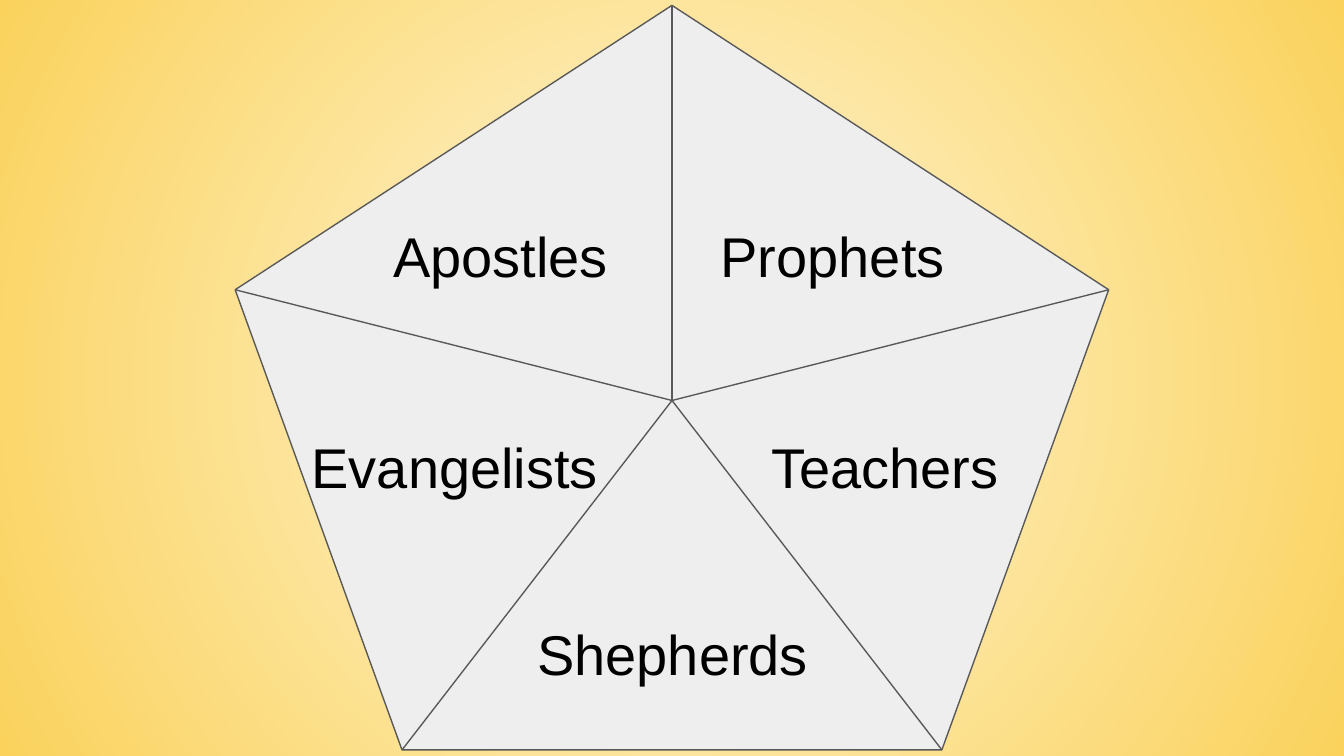
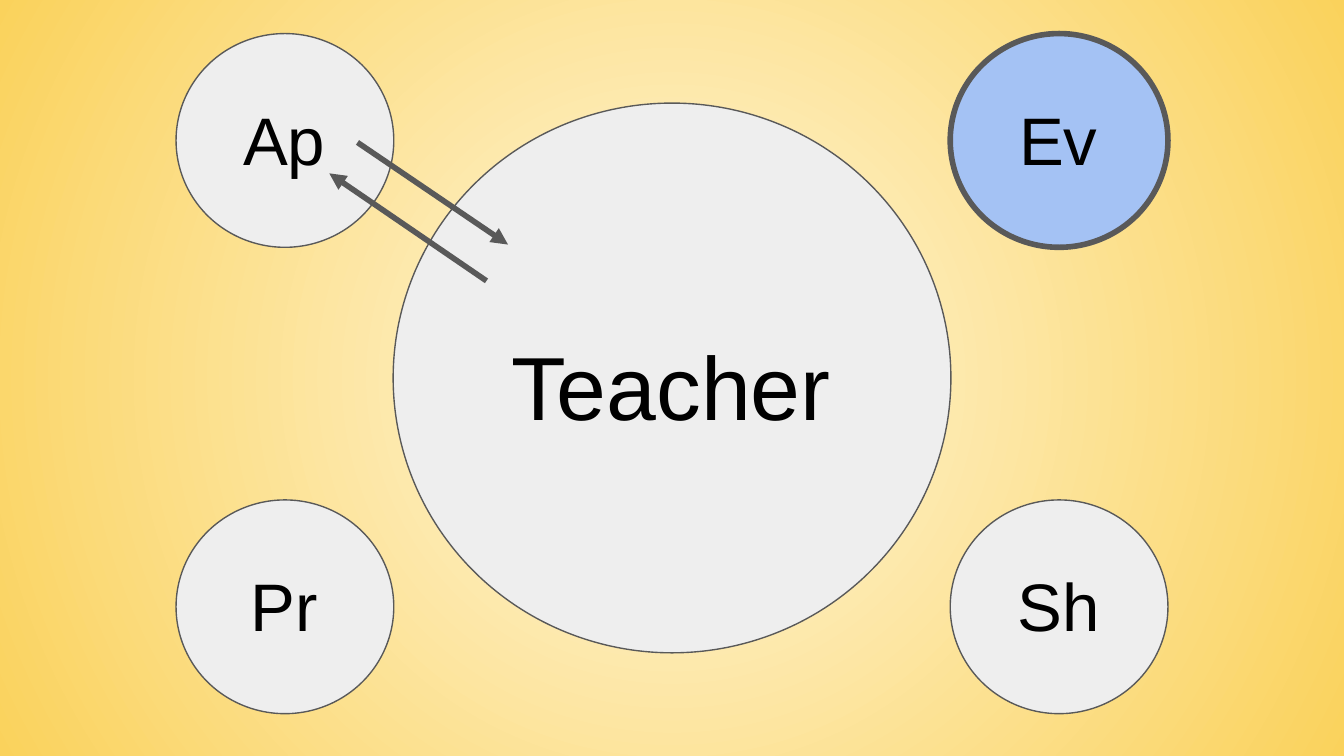
from lxml import etree
from pptx import Presentation
from pptx.dml.color import RGBColor
from pptx.enum.shapes import MSO_CONNECTOR, MSO_SHAPE
from pptx.enum.text import MSO_ANCHOR, PP_ALIGN
from pptx.oxml.ns import qn
from pptx.util import Inches, Pt

WIDTH, HEIGHT = 10, 10 * 9 / 16
FONT = "Arial"
CREAM = RGBColor(0xFF, 0xF6, 0xDB)
GOLD = RGBColor(0xFA, 0xD2, 0x5C)
PALE_GREY = RGBColor(0xEE, 0xEE, 0xEE)
DARK_GREY = RGBColor(0x59, 0x59, 0x59)
SKY_BLUE = RGBColor(0xA4, 0xC2, 0xF4)
BLACK = RGBColor(0, 0, 0)
THIN, THICK = 0.75, 3

# Slide 1: five roles as (name, left, top, width)
ROLES = [
    ("Apostles", 2.72, 1.55, 2.01),
    ("Evangelists", 2.2, 3.12, 2.37),
    ("Teachers", 5.58, 3.12, 2.01),
    ("Prophets", 5.19, 1.55, 2.01),
    ("Shepherds", 3.82, 4.51, 2.37),
]
PENTAGON = (1.75, 0.04, 6.5, 5.54)
HUB = (WIDTH / 2, 2.98)
# Corners as shares of the pentagon's width and height
CORNERS = [(0.5, 0), (0, 0.382), (1, 0.382), (0.191, 1), (0.809, 1)]

# Slide 2: one large circle, and small ones as (name, column, row, fill, line width)
CENTRE_ROLE = "Teacher"
CENTRE_SIZE = (4.15, 4.09)
OUTER_ROLES = [
    ("Ap", 0, 0, PALE_GREY, THIN),
    ("Pr", 0, 1, PALE_GREY, THIN),
    ("Sh", 1, 1, PALE_GREY, THIN),
    ("Ev", 1, 0, SKY_BLUE, THICK),
]
OUTER_ORIGIN, OUTER_STEP, OUTER_SIZE = (1.31, 0.25), (5.76, 3.47), (1.62, 1.59)
EXCHANGE = [((3.62, 2.09), (2.45, 1.29)), ((2.66, 1.06), (3.78, 1.82))]


def add_slide(deck):
    """Blank slide with the shared radial background."""
    slide = deck.slides.add_slide(deck.slide_layouts[6])
    fill = slide.background.fill
    fill.gradient()
    for stop, colour in zip(fill.gradient_stops, (CREAM, GOLD)):
        stop.color.rgb = colour
    linear = next(slide.element.iter(qn("a:lin")))
    radial = etree.Element(qn("a:path"), path="circle")
    etree.SubElement(radial, qn("a:fillToRect"),
                     {side: "50000" for side in "ltrb"})
    linear.getparent().replace(linear, radial)
    return slide


def add_outlined(shapes, preset, box, fill=PALE_GREY, weight=THIN):
    figure = shapes.add_shape(preset, *map(Inches, box))
    figure.shadow.inherit = False
    figure.fill.solid()
    figure.fill.fore_color.rgb = fill
    figure.line.color.rgb = DARK_GREY
    figure.line.width = Pt(weight)


def add_line(shapes, start, end, weight=THIN, arrow=False):
    line = shapes.add_connector(MSO_CONNECTOR.STRAIGHT,
                                *map(Inches, (*start, *end)))
    line.line.color.rgb = DARK_GREY
    line.line.width = Pt(weight)
    if arrow:
        etree.SubElement(line.line._get_or_add_ln(), qn("a:tailEnd"),
                         type="triangle")
    etree.SubElement(line._element.spPr, qn("a:effectLst"))


def add_label(shapes, text, box, size):
    label = shapes.add_textbox(*map(Inches, box))
    frame = label.text_frame
    frame.word_wrap = True
    frame.vertical_anchor = MSO_ANCHOR.TOP
    frame.margin_left = frame.margin_right = Inches(0.1)
    frame.margin_top = frame.margin_bottom = Inches(0.1)
    paragraph = frame.paragraphs[0]
    paragraph.alignment = PP_ALIGN.CENTER
    run = paragraph.add_run()
    run.text = text
    run.font.name = FONT
    run.font.size = Pt(size)
    run.font.color.rgb = BLACK


def build_pentagon(deck):
    shapes = add_slide(deck).shapes.add_group_shape().shapes
    add_outlined(shapes, MSO_SHAPE.REGULAR_PENTAGON, PENTAGON)
    left, top, width, height = PENTAGON
    # Spokes from the hub to every corner
    for across, down in CORNERS:
        add_line(shapes, (left + across * width, top + down * height), HUB)
    for name, x, y, label_width in ROLES:
        add_label(shapes, name, (x, y, label_width, 0.6), 30)


def build_circles(deck):
    shapes = add_slide(deck).shapes
    # Central role
    w, h = CENTRE_SIZE
    add_outlined(shapes, MSO_SHAPE.OVAL,
                 ((WIDTH - w) / 2, (HEIGHT - h) / 2, w, h))
    add_label(shapes, CENTRE_ROLE, (3.68, 2.36, 2.63, 0.91), 48)
    # Outer roles, one per corner
    for name, column, row, fill, weight in OUTER_ROLES:
        x = OUTER_ORIGIN[0] + column * OUTER_STEP[0]
        y = OUTER_ORIGIN[1] + row * OUTER_STEP[1]
        add_outlined(shapes, MSO_SHAPE.OVAL, (x, y, *OUTER_SIZE), fill, weight)
        add_label(shapes, name, (x + 0.36, y + 0.38, 0.89, 0.84), 36)
    # Arrows both ways
    for start, end in EXCHANGE:
        add_line(shapes, start, end, THICK, arrow=True)


def main():
    deck = Presentation()
    deck.slide_width, deck.slide_height = Inches(WIDTH), Inches(HEIGHT)
    build_pentagon(deck)
    build_circles(deck)
    deck.save("out.pptx")


if __name__ == "__main__":
    main()
